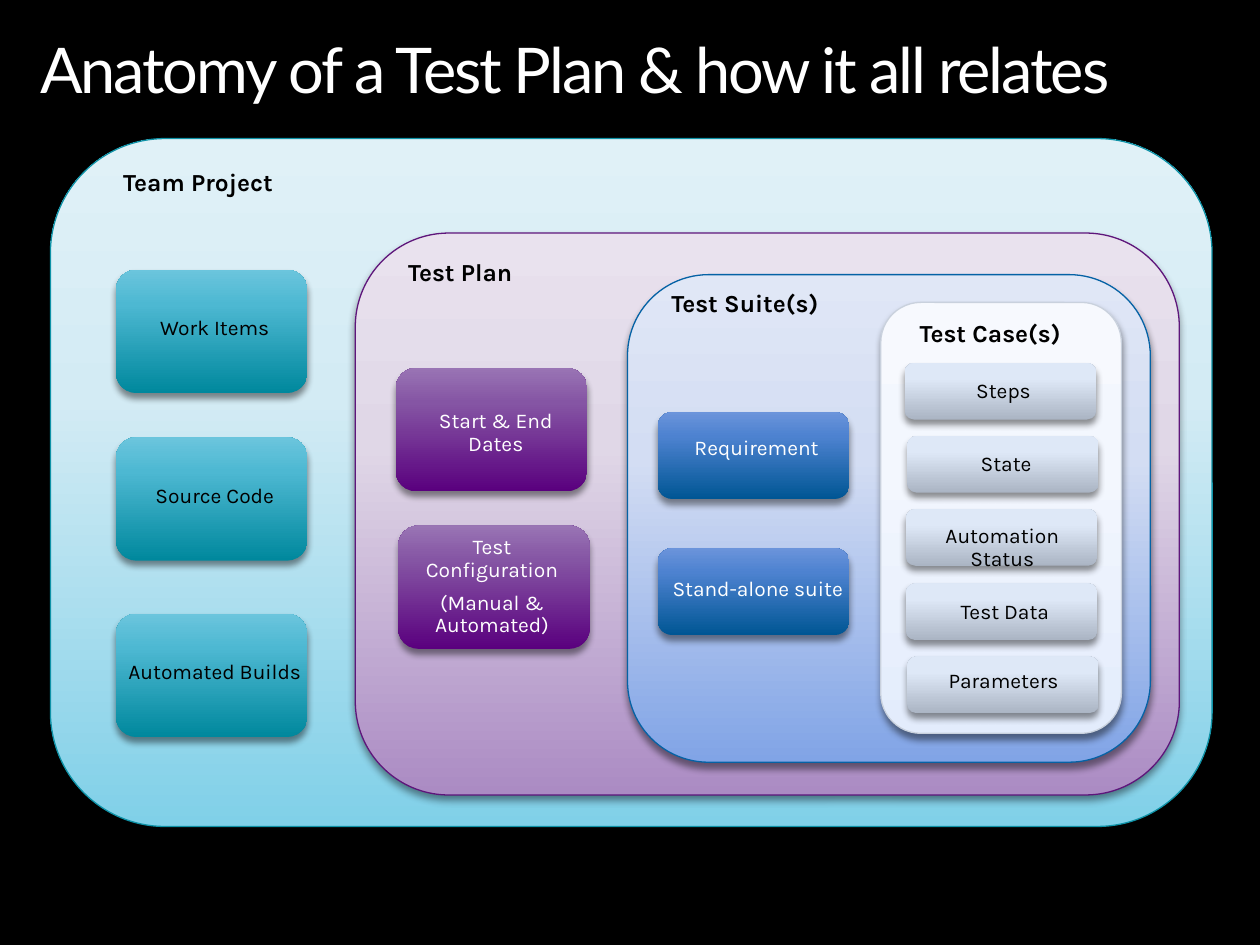
from dataclasses import dataclass

from lxml.etree import SubElement
from pptx import Presentation
from pptx.dml.color import RGBColor
from pptx.enum.shapes import MSO_SHAPE as Preset
from pptx.enum.text import MSO_ANCHOR as Anchor, MSO_AUTO_SIZE as AutoSize, PP_ALIGN as Align
from pptx.oxml.ns import qn
from pptx.util import Pt

PX = 9144

COLORS = {"background": "000000", "light": "FFFFFF", "dark": "000000", "shadow": "000000",
          "project line": "0E92A7", "plan line": "5E167B",
          "suite line": "0562A5", "case line": "C9D1DD"}

GRADIENTS = {
    "project": {0: "80D0E8", 62: "D3EBF4", 100: "E0F1F7"},
    "project card": {0: "00889D", 72: "4DB8D2", 100: "6BC5DD"},
    "plan": {0: "AB8BC3", 62: "E0D7E7", 100: "E9E2EE"},
    "plan card": {0: "5A007E", 72: "8555A4", 100: "9974B4"},
    "suite": {0: "81A4E6", 62: "D3DDF3", 100: "E0E7F6"},
    "suite card": {0: "005694", 72: "4D82D0", 100: "6B94DB"},
    "case": {0: "E3ECFC", 62: "F3F7FE", 100: "F7F9FE"},
    "case card": {0: "ABB5C4", 72: "DEE8F7", 100: "E1EAFA"},
}


@dataclass(frozen=True)
class Frame:
    left: int
    top: int
    width: int
    height: int

    def emu(self) -> tuple[int, ...]:
        return tuple(PX * side for side in (self.left, self.top, self.width, self.height))


@dataclass(frozen=True)
class Card:
    text: str
    left: int
    top: int
    text_left: int
    text_top: int
    text_height: int = 28


@dataclass(frozen=True)
class Panel:
    theme: str
    heading: str
    frame: Frame
    heading_frame: Frame
    card_height: int
    card_color: str
    cards: list[Card]


CARD_WIDTH = 152
LABEL_WIDTH = 157

PANELS = [
    Panel("project", "Team Project", Frame(40, 110, 922, 546), Frame(88, 130, 594, 31), 98, "dark", [
        Card("Work Items", 92, 214, 92, 247),
        Card("Source Code", 92, 347, 92, 380),
        Card("Automated Builds", 92, 487, 92, 520),
    ]),
    Panel("plan", "Test Plan", Frame(282, 185, 654, 446), Frame(314, 202, 314, 31), 98, "light", [
        Card("Start & End Dates", 314, 292, 315, 321),
        Card("Test Configuration\n(Manual & Automated)", 316, 417, 312, 421, 73),
    ]),
    Panel("suite", "Test Suite(s)", Frame(498, 218, 415, 387), Frame(523, 226, 314, 31), 69, "light", [
        Card("Requirement", 522, 327, 522, 342),
        Card("Stand-alone suite", 522, 435, 523, 454),
    ]),
    Panel("case", "Test Case(s)", Frame(699, 240, 191, 342), Frame(720, 250, 170, 31), 45, "dark", [
        Card("Steps", 718, 288, 718, 297),
        Card("State", 720, 346, 720, 355),
        Card("Automation Status", 719, 404, 717, 412),
        Card("Test Data", 719, 463, 719, 472),
        Card("Parameters", 720, 521, 718, 527),
    ]),
]


def write_text(box, text: str, *, size: int, color: str, font: str = "Karla", bold: bool = False,
               align=Align.LEFT, gap: float = 5.8, tracking: int = 0) -> None:
    frame = box.text_frame
    frame.word_wrap = True
    frame.auto_size = AutoSize.SHAPE_TO_FIT_TEXT
    frame.vertical_anchor = Anchor.TOP
    for index, line in enumerate(text.split("\n")):
        para = frame.add_paragraph() if index else frame.paragraphs[0]
        para.alignment = align
        para.line_spacing = 0.9
        para.space_before = Pt(gap if index else 0)
        span = para.add_run()
        span.text = line
        span.font.name = font
        span.font.size = Pt(size)
        span.font.bold = bold
        span.font.color.rgb = RGBColor.from_string(COLORS[color])
        if tracking:
            span.font._element.set("spc", str(tracking))


def add_color(parent, color: str):
    return SubElement(parent, qn("a:srgbClr"), val=color)


def draw_block(page, frame: Frame, gradient: str, line: str | None = None) -> None:
    block = page.shapes.add_shape(Preset.ROUNDED_RECTANGLE, *frame.emu())
    block.fill.gradient()
    block.fill.gradient_angle = 90
    properties = block._element.spPr
    stops = properties.find(".//" + qn("a:gsLst"))
    for stop in list(stops):
        stops.remove(stop)
    for position, color in GRADIENTS[gradient].items():
        add_color(SubElement(stops, qn("a:gs"), pos=str(position * 1000)), color)
    if line:
        block.line.color.rgb = RGBColor.from_string(COLORS[line])
        block.line.width = Pt(0.75)
    else:
        block.line.fill.background()
    block.shadow.inherit = False
    shadow = SubElement(properties.find(qn("a:effectLst")), qn("a:outerShdw"),
                        blurRad=str(Pt(4)), dist=str(Pt(3)), dir="5400000", rotWithShape="0")
    SubElement(add_color(shadow, COLORS["shadow"]), qn("a:alpha"), val="43000")


def draw_card(page, card: Card, panel: Panel) -> None:
    draw_block(page, Frame(card.left, card.top, CARD_WIDTH, panel.card_height), f"{panel.theme} card")
    label = Frame(card.text_left, card.text_top, LABEL_WIDTH, card.text_height)
    write_text(page.shapes.add_textbox(*label.emu()), card.text,
               size=12, color=panel.card_color, align=Align.CENTER)


def draw_panel(page, panel: Panel) -> None:
    draw_block(page, panel.frame, panel.theme, f"{panel.theme} line")
    write_text(page.shapes.add_textbox(*panel.heading_frame.emu()), panel.heading,
               size=14, color="dark", bold=True)
    for card in panel.cards:
        draw_card(page, card, panel)


def main() -> None:
    deck = Presentation()
    deck.slide_width, deck.slide_height = 1000 * PX, 750 * PX
    page = deck.slides.add_slide(deck.slide_layouts[5])
    page.background.fill.solid()
    page.background.fill.fore_color.rgb = RGBColor.from_string(COLORS["background"])
    title = page.shapes.title
    title.left, title.top, title.width, title.height = Frame(22, 26, 964, 66).emu()
    write_text(title, "Anatomy of a Test Plan & how it all relates",
               size=36, color="light", font="Lato", tracking=-120)
    for panel in PANELS:
        draw_panel(page, panel)
    deck.save("out.pptx")


if __name__ == "__main__":
    main()
